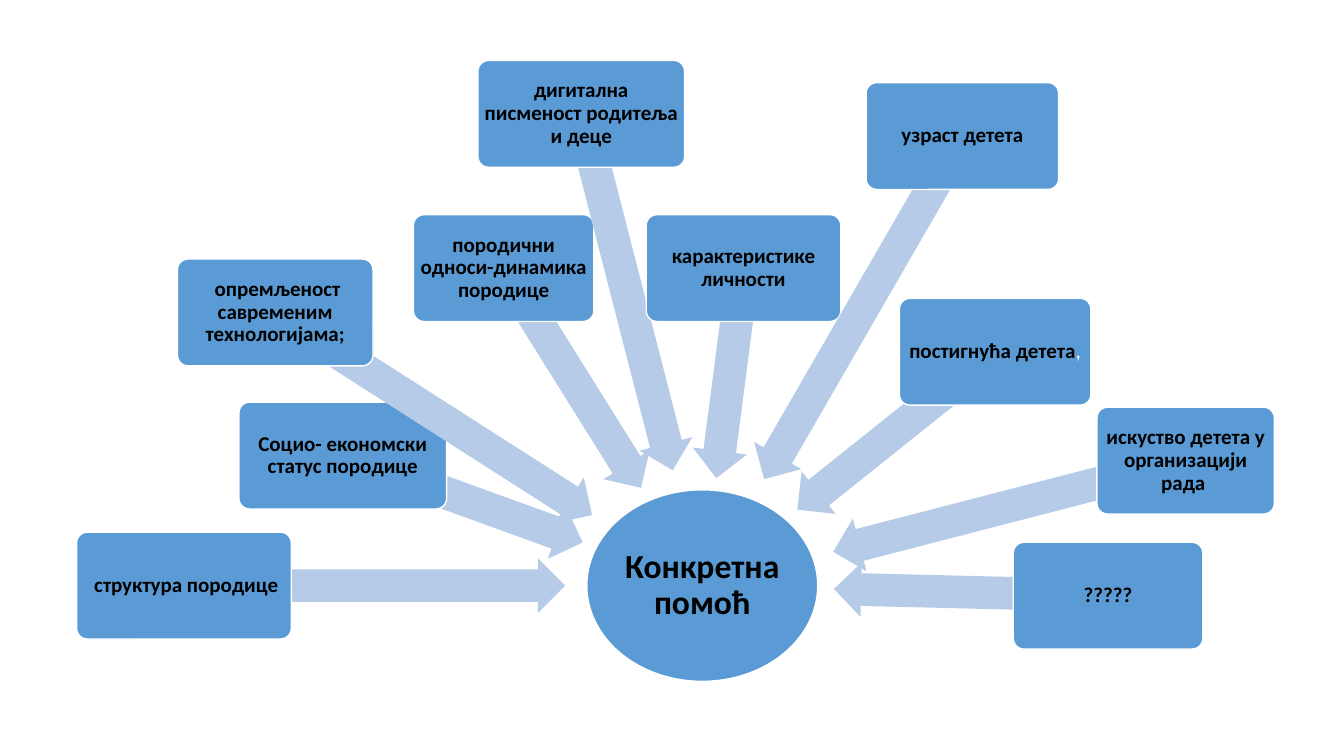
from math import atan2, cos, degrees, sin

from pptx import Presentation
from pptx.dml.color import RGBColor
from pptx.enum.shapes import MSO_SHAPE
from pptx.enum.text import MSO_ANCHOR, PP_ALIGN
from pptx.util import Inches, Pt

THEME = {
    "font": "Calibri",
    "box": RGBColor(0x5B, 0x9B, 0xD5),
    "arrow": RGBColor(0xB5, 0xCB, 0xE7),
    "light": RGBColor(0xFF, 0xFF, 0xFF),
    "dark": RGBColor(0, 0, 0),
    "hub_size": Pt(24),
    "box_size": Pt(15),
}

# Runs are (text, is dark and bold)
HUB_RUNS = [("Конкретна помоћ", True)]
HUB = (5.82, 4.86, 2.29, 1.9)
BOX_H, ARROW_H = 1.06, 0.54

# left, top, width, arrow length, runs
FACTORS = [
    (0.76, 5.28, 2.13, 3.78, [(" структура породице", True)]),
    (2.37, 3.99, 2.06, 2.53, [("Социо- економски статус породице", True)]),
    (1.76, 2.57, 1.94, 3.73, [(" ", False), ("опремљеност савременим технологијама;", True)]),
    (4.1, 2.13, 1.79, 2.57, [("породични односи-динамика породице", True)]),
    (4.74, 0.6, 2.05, 3.65, [("дигитална писменост родитеља и деце", True)]),
    (6.41, 2.13, 1.93, 2.1, [("карактеристике личности", True)]),
    (8.59, 0.82, 1.91, 3.93, [("узраст детета", True)]),
    (8.92, 2.96, 1.9, 2.51, [("постигнућа детета", True), (",", False)]),
    (10.88, 4.04, 1.76, 3.61, [("искуство детета у организацији рада ", True)]),
    (10.05, 5.38, 1.88, 2.72, [("?????", True)]),
]


def add_filled(s, kind, at, fill, line=None):
    sp = s.shapes.add_shape(kind, *(Inches(v) for v in at))
    sp.shadow.inherit = False
    sp.fill.solid()
    sp.fill.fore_color.rgb = fill
    if line is None:
        sp.line.fill.background()
    else:
        sp.line.color.rgb = line
        sp.line.width = Pt(1)
    return sp


def add_label(sp, runs, size, margin):
    tf = sp.text_frame
    tf.word_wrap = True
    tf.vertical_anchor = MSO_ANCHOR.MIDDLE
    tf.margin_left = tf.margin_right = tf.margin_top = tf.margin_bottom = Inches(margin)
    p = tf.paragraphs[0]
    p.alignment = PP_ALIGN.CENTER
    p.line_spacing = 0.9
    for text, strong in runs:
        r = p.add_run()
        r.text = text
        r.font.name = THEME["font"]
        r.font.size = size
        r.font.bold = strong
        r.font.color.rgb = THEME["dark"] if strong else THEME["light"]


def add_arrow(s, x, y, length):
    """Draw an arrow from (x, y) pointing at the centre of the hub."""
    left, top, w, h = HUB
    angle = atan2(top + h / 2 - y, left + w / 2 - x)
    mid_x = x + cos(angle) * length / 2
    mid_y = y + sin(angle) * length / 2
    at = (mid_x - length / 2, mid_y - ARROW_H / 2, length, ARROW_H)
    sp = add_filled(s, MSO_SHAPE.LEFT_ARROW, at, THEME["arrow"])
    sp.adjustments[0] = 0.6
    sp.adjustments[1] = 0.5
    sp.rotation = round(degrees(angle) + 180, 1) % 360


def main():
    prs = Presentation()
    prs.slide_width, prs.slide_height = Inches(13.33), Inches(7.5)
    s = prs.slides.add_slide(prs.slide_layouts[6])

    hub = add_filled(s, MSO_SHAPE.OVAL, HUB, THEME["box"], THEME["light"])
    add_label(hub, HUB_RUNS, THEME["hub_size"], 0.02)

    for left, top, width, length, runs in FACTORS:
        add_arrow(s, left + width / 2, top + BOX_H / 2, length)
        box = add_filled(s, MSO_SHAPE.ROUNDED_RECTANGLE, (left, top, width, BOX_H),
                         THEME["box"], THEME["light"])
        box.adjustments[0] = 0.1
        add_label(box, runs, THEME["box_size"], 0.03)

    prs.save("out.pptx")


if __name__ == "__main__":
    main()
